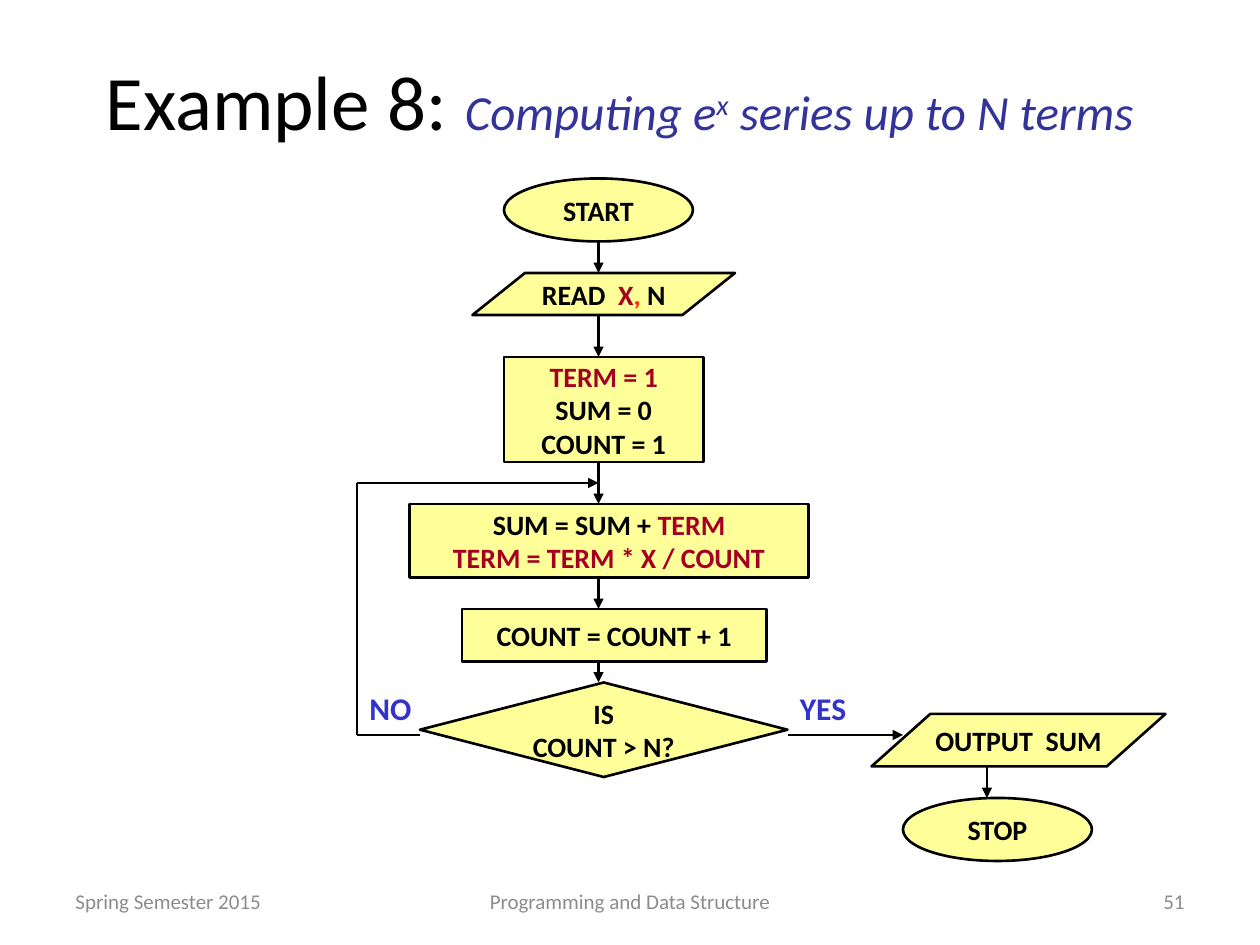
from dataclasses import dataclass
from itertools import pairwise
from lxml.etree import SubElement
from pptx import Presentation
from pptx.dml.color import RGBColor
from pptx.enum.shapes import MSO_CONNECTOR, MSO_SHAPE
from pptx.enum.text import MSO_ANCHOR, PP_ALIGN
from pptx.oxml.ns import qn
from pptx.util import Inches, Pt


@dataclass(frozen=True)
class Theme:
    font: str = "Calibri"
    ink: str = "000000"
    fill: str = "FFFF99"
    red: str = "A50021"
    comma: str = "FF3300"
    blue: str = "333399"
    label: str = "3333CC"
    gray: str = "8C8C8C"
    title: int = 44
    sub: int = 28
    body: int = 16
    tag: int = 18
    foot: int = 12
    line: float = 1.5


T = Theme()

# The slide is a grid of 120 columns by 90 rows
COLS, ROWS = 120, 90
WIDE, HIGH = Inches(10), Inches(7.5)
AXIS = 57   # column of the main flow
LOOP = 34   # column of the way back
TEST = 70   # row of the yes and no branches
JOIN = 46   # row where the loop returns

BODY = {"size": Pt(T.body), "bold": True}
TAG = {"size": Pt(T.tag), "bold": True}
FOOT = {"size": Pt(T.foot)}
HEAD = {"size": Pt(T.title)}
SUB = {"size": Pt(T.sub), "italic": True}


def grid(col, row):
    return round(col * WIDE / COLS), round(row * HIGH / ROWS)


def paint(part, color):
    part.solid()
    part.fore_color.rgb = RGBColor.from_string(color)


def add_run(para, text, color, form):
    run = para.add_run()
    run.text = text
    for key, val in {"name": T.font, **form}.items():
        setattr(run.font, key, val)
    run.font.color.rgb = RGBColor.from_string(color)
    return run


def write(frame, lines, form, **style):
    """Fill a frame; each line is a list of (text, colour) pairs."""
    align = style.pop("align", PP_ALIGN.CENTER)
    for key, val in style.items():
        setattr(frame, key, val)
    for num, line in enumerate(lines):
        para = frame.add_paragraph() if num else frame.paragraphs[0]
        para.alignment = align
        for text, color in line:
            add_run(para, text, color, form)


def add_step(slide, kind, box, *lines):
    shape = slide.shapes.add_shape(kind, *grid(*box[:2]), *grid(*box[2:]))
    shape.shadow.inherit = False
    paint(shape.fill, T.fill)
    paint(shape.line.fill, T.ink)
    shape.line.width = Pt(T.line)
    write(shape.text_frame, lines, BODY, word_wrap=False,
          vertical_anchor=MSO_ANCHOR.MIDDLE)


def add_line(slide, start, end, arrow=True):
    link = slide.shapes.add_connector(
        MSO_CONNECTOR.STRAIGHT, *grid(*start), *grid(*end))
    paint(link.line.fill, T.ink)
    link.line.width = Pt(T.line)
    if arrow:
        SubElement(link.line._get_or_add_ln(), qn("a:tailEnd"), type="triangle")
    SubElement(link._element.spPr, qn("a:effectLst"))


def add_text(slide, box, text, color, form, align=PP_ALIGN.LEFT,
             anchor=MSO_ANCHOR.MIDDLE):
    area = slide.shapes.add_textbox(*grid(*box[:2]), *grid(*box[2:]))
    lines = [[(text, color)]] if text else []
    write(area.text_frame, lines, form, align=align, word_wrap=True,
          vertical_anchor=anchor)
    return area.text_frame


def add_title(slide):
    frame = add_text(slide, (4, 4, 110, 11), "", T.ink, HEAD)
    para = frame.paragraphs[0]
    para.alignment = PP_ALIGN.CENTER
    add_run(para, "Example 8: ", T.ink, HEAD)
    add_run(para, "Computing e", T.blue, SUB)
    power = add_run(para, "x", T.blue, SUB)
    power._r.get_or_add_rPr().set("baseline", "30000")
    add_run(para, " series up to N terms", T.blue, SUB)


def add_flow(slide):
    oval, slant = MSO_SHAPE.OVAL, MSO_SHAPE.FLOWCHART_DATA
    rect, gem = MSO_SHAPE.RECTANGLE, MSO_SHAPE.FLOWCHART_DECISION
    ink, red = T.ink, T.red

    # Main flow, top to bottom
    main_flow = [
        (oval, (48, 17, 18, 6), [("START", ink)]),
        (slant, (45, 26, 25, 4),
         [("READ  ", ink), ("X", red), (",", T.comma), (" N", ink)]),
        (rect, (48, 34, 19, 10),
         [("TERM = 1", red)], [("SUM = 0", ink)], [("COUNT = 1", ink)]),
        (rect, (39, 48, 38, 7),
         [("SUM = SUM + ", ink), ("TERM", red)],
         [("TERM = TERM * X / COUNT", red)]),
        (rect, (44, 58, 29, 5), [("COUNT = COUNT + 1", ink)]),
        (gem, (40, 65, 35, 9), [("IS", ink)], [("COUNT > N?", ink)]),
    ]
    # Exit branch
    leave = [
        (slant, (83, 68, 28, 5), [("OUTPUT  SUM", ink)]),
        (oval, (86, 76, 18, 6), [("STOP", ink)]),
    ]
    for step in main_flow + leave:
        add_step(slide, *step)

    # Arrows between neighbours in each column
    for steps, col in ((main_flow, AXIS), (leave, 94)):
        for (_, top, *_), (_, low, *_) in pairwise(steps):
            add_line(slide, (col, top[1] + top[3]), (col, low[1]))

    # Branches of the test
    add_line(slide, (75, TEST), (86, TEST))
    add_line(slide, (40, TEST), (LOOP, TEST), arrow=False)
    add_line(slide, (LOOP, TEST), (LOOP, JOIN), arrow=False)
    add_line(slide, (LOOP, JOIN), (AXIS, JOIN))
    for text, col in (("YES", 75), ("NO", LOOP)):
        add_text(slide, (col, 65, 14, 4.8), text, T.label, TAG,
                 anchor=MSO_ANCHOR.TOP)


def add_foot(slide):
    for text, col, span, align in (
            ("Spring Semester 2015", 6, 28, PP_ALIGN.LEFT),
            ("Programming and Data Structure", 41, 38, PP_ALIGN.CENTER),
            ("51", 86, 28, PP_ALIGN.RIGHT)):
        add_text(slide, (col, 83.4, span, 4.8), text, T.gray, FOOT, align)


def main():
    deck = Presentation()
    deck.slide_width, deck.slide_height = WIDE, HIGH
    slide = deck.slides.add_slide(deck.slide_layouts[6])
    add_title(slide)
    add_foot(slide)
    add_flow(slide)
    deck.save("out.pptx")


if __name__ == "__main__":
    main()
